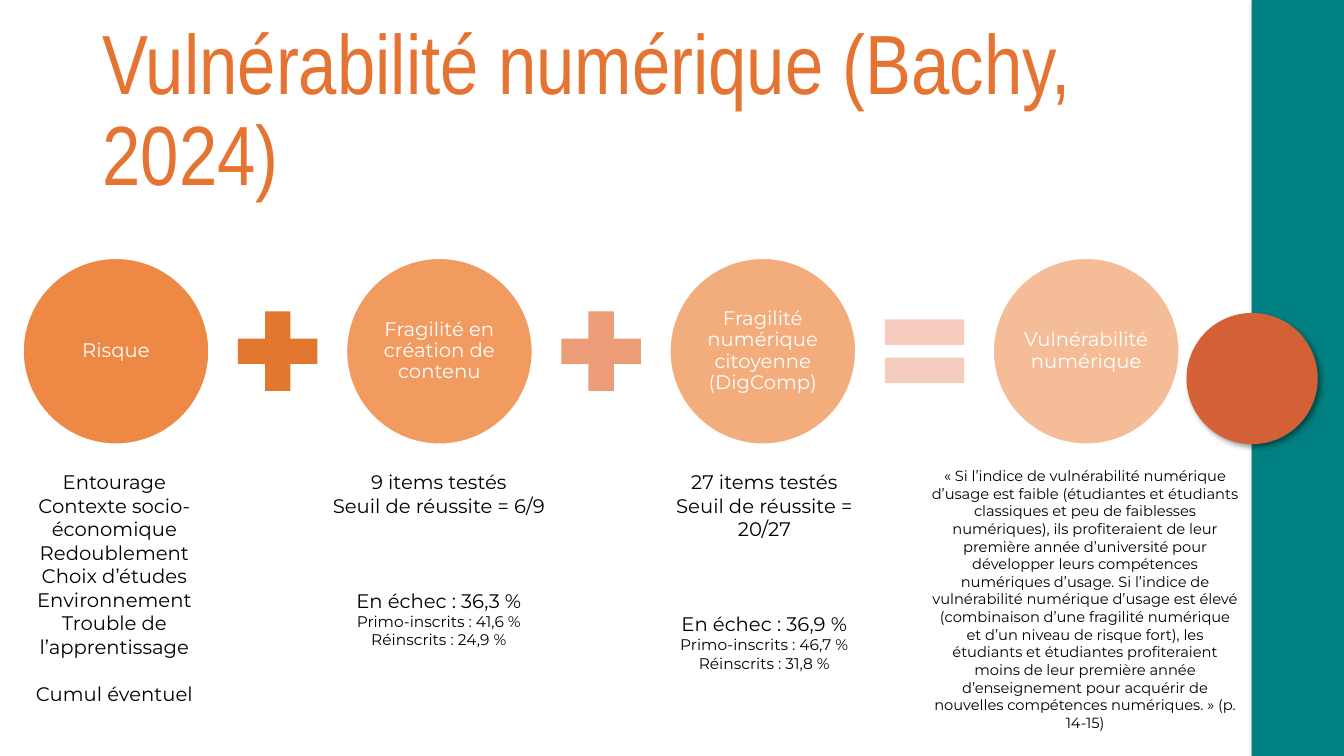
from dataclasses import dataclass

from lxml.etree import SubElement
from pptx import Presentation
from pptx.dml.color import RGBColor
from pptx.enum.shapes import MSO_SHAPE as SHAPE
from pptx.enum.text import MSO_ANCHOR as ANCHOR, MSO_AUTO_SIZE as FIT, PP_ALIGN as ALIGN
from pptx.oxml import parse_xml
from pptx.oxml.ns import nsdecls, qn
from pptx.util import Pt

PX = 9525
STEP = 308
CIRCLE_LEFT, CIRCLE_TOP, CIRCLE_SIZE = 22, 246, 177
SIGN_LEFT, SIGN_TOP, SIGN_SIZE = 213, 283, 103
BODY = "Montserrat"
WHITE, BLACK, ORANGE = "FFFFFF", "000000", "ED7D31"

SHADOW = (
    f'<a:effectLst {nsdecls("a")}><a:outerShdw blurRad="50800" dist="38100" '
    'dir="2700000" algn="tl" rotWithShape="0"><a:srgbClr val="000000">'
    '<a:alpha val="40000"/></a:srgbClr></a:outerShdw></a:effectLst>'
)


@dataclass(frozen=True)
class Box:
    left: int
    top: int
    width: int
    height: int

    def emu(self) -> tuple[int, ...]:
        return tuple(v * PX for v in (self.left, self.top, self.width, self.height))


@dataclass(frozen=True)
class Factor:
    label: str
    opacity: int


@dataclass(frozen=True)
class Sign:
    kind: SHAPE
    color: str


@dataclass(frozen=True)
class Line:
    text: str
    size: float = 14
    before: int = 0


@dataclass(frozen=True)
class Note:
    box: Box
    lines: tuple[Line, ...]


FACTORS = (
    Factor("Risque", 90),
    Factor("Fragilité en création de contenu", 77),
    Factor("Fragilité numérique citoyenne (DigComp)", 63),
    Factor("Vulnérabilité numérique", 50),
)

SIGNS = (
    Sign(SHAPE.MATH_PLUS, "E2772F"),
    Sign(SHAPE.MATH_PLUS, "EC9D77"),
    Sign(SHAPE.MATH_EQUAL, "F6CCBF"),
)

QUOTE = (
    "« Si l’indice de vulnérabilité numérique d’usage est faible (étudiantes et "
    "étudiants classiques et peu de faiblesses numériques), ils profiteraient de leur "
    "première année d’université pour développer leurs compétences numériques d’usage. "
    "Si l’indice de vulnérabilité numérique d’usage est élevé (combinaison d’une "
    "fragilité numérique et d’un niveau de risque fort), les étudiants et étudiantes "
    "profiteraient moins de leur première année d’enseignement pour acquérir de "
    "nouvelles compétences numériques. » (p. 14-15)"
)


def results(items: str, threshold: str, failed: str, new: str, again: str) -> tuple[Line, ...]:
    return (
        Line(f"{items} items testés"),
        Line(f"Seuil de réussite = {threshold}"),
        Line(f"En échec : {failed} %", before=51),
        Line(f"Primo-inscrits : {new} %", 11),
        Line(f"Réinscrits : {again} %", 11),
    )


NOTES = (
    Note(Box(-8, 443, 234, 191), (
        Line("Entourage"),
        Line("Contexte socio-économique"),
        Line("Redoublement"),
        Line("Choix d’études"),
        Line("Environnement"),
        Line("Trouble de l’apprentissage"),
        Line("Cumul éventuel", before=17),
    )),
    Note(Box(301, 443, 234, 180), results("9", "6/9", "36,3", "41,6", "24,9")),
    Note(Box(611, 443, 234, 204), results("27", "20/27", "36,9", "46,7", "31,8")),
    Note(Box(878, 440, 311, 196), (Line(QUOTE, 10.5),)),
)


def rgb(color: str) -> RGBColor:
    return RGBColor.from_string(color)


def apply(target, values: dict) -> None:
    for name, value in values.items():
        setattr(target, name, value)


def write(p, text: str, size: float, color: str, font: str = BODY, **layout) -> None:
    r = p.add_run()
    r.text = text
    apply(r.font, {"name": font, "size": Pt(size)})
    r.font.color.rgb = rgb(color)
    apply(p, layout)


def add_solid(slide, kind: SHAPE, box: Box, color: str):
    sp = slide.shapes.add_shape(kind, *box.emu())
    sp.shadow.inherit = False
    sp.fill.solid()
    sp.fill.fore_color.rgb = rgb(color)
    sp.line.fill.background()
    return sp


def add_decor(slide, kind: SHAPE, box: Box, color: str) -> None:
    sp = add_solid(slide, kind, box, color)
    effects = sp._element.spPr.find(qn("a:effectLst"))
    effects.getparent().replace(effects, parse_xml(SHADOW))


def add_factor(slide, index: int, factor: Factor) -> None:
    box = Box(CIRCLE_LEFT + index * STEP, CIRCLE_TOP, CIRCLE_SIZE, CIRCLE_SIZE)
    sp = add_solid(slide, SHAPE.OVAL, box, ORANGE)
    fill = sp._element.spPr.find(qn("a:solidFill"))
    SubElement(fill[0], qn("a:alpha"), val=str(factor.opacity * 1000))
    sp.line.color.rgb = rgb(WHITE)
    sp.line.width = Pt(1)
    tf = sp.text_frame
    apply(tf, {"word_wrap": True, "vertical_anchor": ANCHOR.MIDDLE})
    apply(tf, {f"margin_{side}": 2 * PX for side in ("left", "top", "right", "bottom")})
    write(tf.paragraphs[0], factor.label, 14, WHITE, alignment=ALIGN.CENTER, line_spacing=0.9)


def add_sign(slide, index: int, sign: Sign) -> None:
    box = Box(SIGN_LEFT + index * STEP, SIGN_TOP, SIGN_SIZE, SIGN_SIZE)
    add_solid(slide, sign.kind, box, sign.color)


def add_note(slide, note: Note) -> None:
    tf = slide.shapes.add_textbox(*note.box.emu()).text_frame
    apply(tf, {"word_wrap": True, "auto_size": FIT.SHAPE_TO_FIT_TEXT})
    for i, line in enumerate(note.lines):
        p = tf.add_paragraph() if i else tf.paragraphs[0]
        write(p, line.text, line.size, BLACK,
              alignment=ALIGN.CENTER, space_before=Pt(line.before))


def set_title(slide, box: Box, text: str) -> None:
    sp = slide.shapes.title
    apply(sp, dict(zip(("left", "top", "width", "height"), box.emu())))
    tf = sp.text_frame
    apply(tf, {"word_wrap": True, "auto_size": FIT.NONE, "vertical_anchor": ANCHOR.MIDDLE})
    write(tf.paragraphs[0], text, 60, "E57432", "Arial Narrow",
          alignment=ALIGN.LEFT, line_spacing=0.9)


def main() -> None:
    prs = Presentation()
    apply(prs, {"slide_width": 1280 * PX, "slide_height": 720 * PX})
    slide = prs.slides.add_slide(prs.slide_layouts[5])
    set_title(slide, Box(88, 38, 1104, 139), "Vulnérabilité numérique (Bachy, 2024)")
    add_decor(slide, SHAPE.RECTANGLE, Box(1192, 0, 88, 720), "008080")
    add_decor(slide, SHAPE.FLOWCHART_CONNECTOR, Box(1130, 298, 125, 125), "D36135")
    for i, factor in enumerate(FACTORS):
        add_factor(slide, i, factor)
    for i, sign in enumerate(SIGNS):
        add_sign(slide, i, sign)
    for note in NOTES:
        add_note(slide, note)
    prs.save("out.pptx")


if __name__ == "__main__":
    main()
